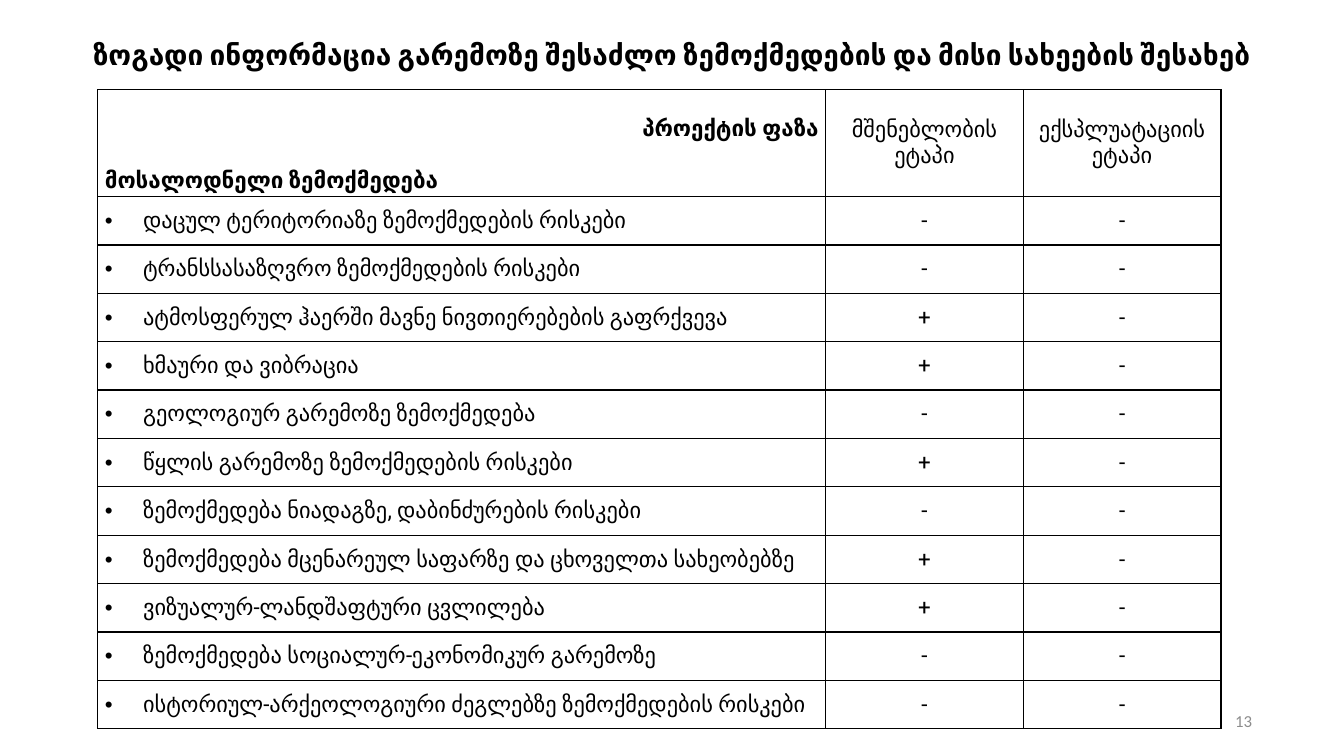
import pptx
import pptx.dml.color
import pptx.enum.text
import pptx.oxml.ns
import pptx.util
import lxml.etree

Inches = pptx.util.Inches
Pt = pptx.util.Pt
Align = pptx.enum.text.PP_ALIGN
Anchor = pptx.enum.text.MSO_ANCHOR
qn = pptx.oxml.ns.qn


def write(para, text, size=16, font="Roboto", color="000000", bold=False,
          align=Align.LEFT, before=0, bullet=False):
    para.alignment = align
    para.space_before = Pt(before)
    span = para.add_run()
    span.text = text
    span.font.size = Pt(size)
    span.font.name = font
    span.font.bold = bold
    span.font.color.rgb = pptx.dml.color.RGBColor.from_string(color)
    if bullet:
        properties = para._p.get_or_add_pPr()
        properties.set("marL", str(Inches(0.38)))
        properties.set("indent", str(-Inches(0.38)))
        lxml.etree.SubElement(properties, qn("a:buFont"), typeface="Arial")
        lxml.etree.SubElement(properties, qn("a:buChar"), char="•")


def style_cell(cell):
    cell.margin_left = cell.margin_right = Inches(0.07)
    cell.margin_top = cell.margin_bottom = 0
    cell.vertical_anchor = Anchor.MIDDLE
    properties = cell._tc.get_or_add_tcPr()
    for side in ("a:lnL", "a:lnR", "a:lnT", "a:lnB"):
        line = lxml.etree.SubElement(properties, qn(side), w=str(Pt(1)))
        fill = lxml.etree.SubElement(line, qn("a:solidFill"))
        lxml.etree.SubElement(fill, qn("a:srgbClr"), val="000000")
    cell.fill.background()


impacts = [
    ("დაცულ ტერიტორიაზე ზემოქმედების რისკები", "-", "-"),
    ("ტრანსსასაზღვრო ზემოქმედების რისკები", "-", "-"),
    ("ატმოსფერულ ჰაერში მავნე ნივთიერებების გაფრქვევა", "+", "-"),
    ("ხმაური და ვიბრაცია", "+", "-"),
    ("გეოლოგიურ გარემოზე ზემოქმედება", "-", "-"),
    ("წყლის გარემოზე ზემოქმედების რისკები", "+", "-"),
    ("ზემოქმედება ნიადაგზე, დაბინძურების რისკები", "-", "-"),
    ("ზემოქმედება მცენარეულ საფარზე და ცხოველთა სახეობებზე", "+", "-"),
    ("ვიზუალურ-ლანდშაფტური ცვლილება", "+", "-"),
    ("ზემოქმედება სოციალურ-ეკონომიკურ გარემოზე", "-", "-"),
    ("ისტორიულ-არქეოლოგიური ძეგლებზე ზემოქმედების რისკები", "-", "-"),
]
rows = [("", "მშენებლობის ეტაპი", "ექსპლუატაციის ეტაპი")] + impacts

deck = pptx.Presentation()
deck.slide_width = Inches(13.33)
deck.slide_height = Inches(7.5)
page = deck.slides.add_slide(deck.slide_layouts[6])

number_box = page.shapes.add_textbox(Inches(9.42), Inches(6.95), Inches(3), Inches(0.4))
number_box.text_frame.word_wrap = True
number_box.text_frame.margin_left = number_box.text_frame.margin_right = 0
number_box.text_frame.vertical_anchor = Anchor.MIDDLE
write(number_box.text_frame.paragraphs[0], "13", size=12, font="Calibri",
      color="8C8C8C", align=Align.RIGHT)

title_box = page.shapes.add_textbox(0, Inches(0.32), Inches(13.33), Inches(0.44))
title_box.text_frame.word_wrap = True
write(title_box.text_frame.paragraphs[0],
      "ზოგადი ინფორმაცია გარემოზე შესაძლო ზემოქმედების და მისი სახეების შესახებ",
      size=20, font="Calibri", bold=True, align=Align.CENTER)

table = page.shapes.add_table(len(rows), 3, Inches(0.97), Inches(0.89),
                              Inches(11.13), Inches(6.35)).table
for column, width in zip(table.columns, (7.22, 1.96, 1.96)):
    column.width = Inches(width)
for row in table.rows:
    row.height = Inches(0.48)
table.rows[0].height = Inches(1.06)

for row_index, texts in enumerate(rows):
    for column_index, text in enumerate(texts):
        cell = table.cell(row_index, column_index)
        style_cell(cell)
        if text:
            is_label = column_index == 0
            write(cell.text_frame.paragraphs[0], text, bullet=is_label,
                  align=Align.LEFT if is_label else Align.CENTER)

corner = table.cell(0, 0)
corner.vertical_anchor = Anchor.TOP
corner.margin_top = Inches(0.26)
write(corner.text_frame.paragraphs[0], "პროექტის ფაზა", bold=True, align=Align.RIGHT)
write(corner.text_frame.add_paragraph(), "მოსალოდნელი ზემოქმედება", bold=True, before=18.75)

deck.save("out.pptx")
